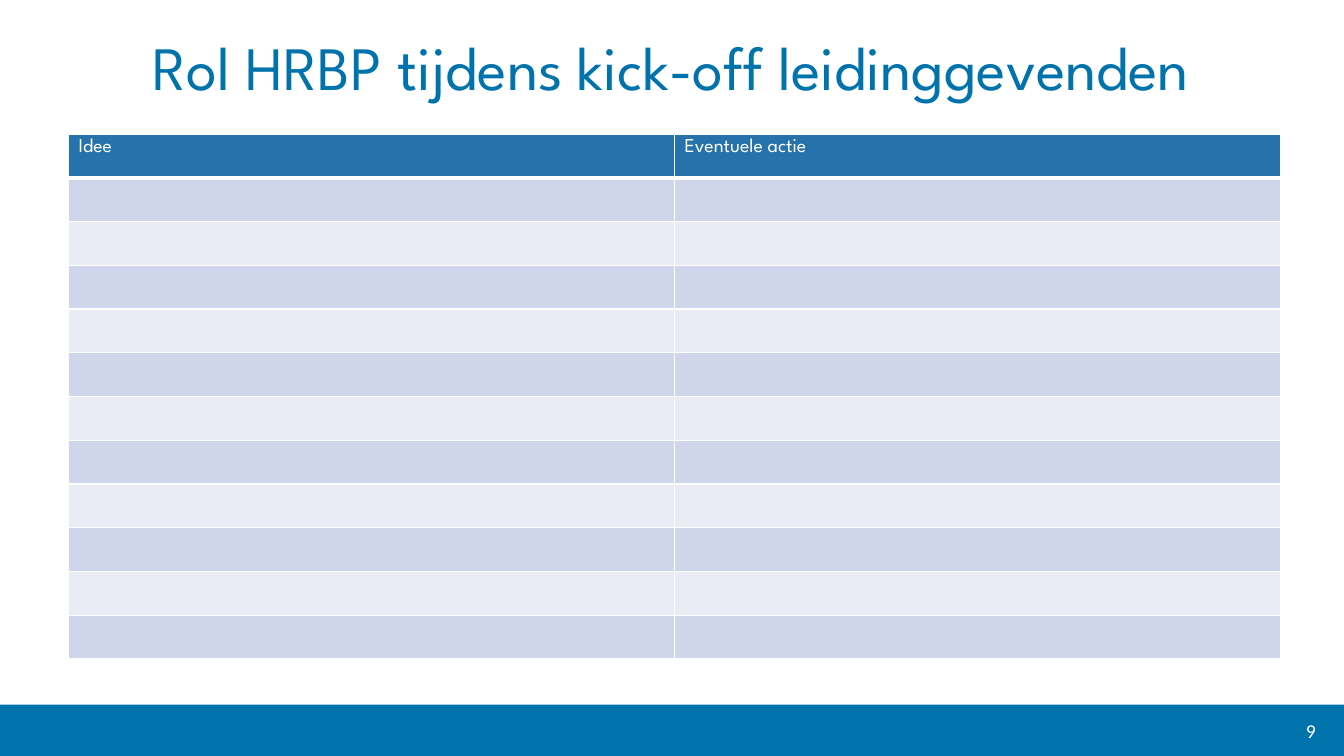
from lxml import etree
from pptx import Presentation
from pptx.dml.color import RGBColor
from pptx.enum.shapes import MSO_SHAPE
from pptx.enum.text import MSO_ANCHOR, MSO_AUTO_SIZE, PP_ALIGN
from pptx.oxml.ns import qn
from pptx.util import Inches, Pt

RECTANGLE = MSO_SHAPE.RECTANGLE
TOP, MIDDLE = MSO_ANCHOR.TOP, MSO_ANCHOR.MIDDLE
CENTER, RIGHT = PP_ALIGN.CENTER, PP_ALIGN.RIGHT
NO_FIT = MSO_AUTO_SIZE.NONE

# Content
TITLE = "Rol HRBP tijdens kick-off leidinggevenden"
HEADINGS = ["Idee", "Eventuele actie"]
EMPTY_ROWS = 11
PAGE_NUMBER = "9"

# Style
HEADING_FONT, NUMBER_FONT = "League Spartan", "Calibri"
BLUE, HEADER_BLUE, WHITE = "0073AC", "2673AC", "FFFFFF"
BANDS = ["CFD5EA", "E9EBF5"]


def color(value):
    return RGBColor.from_string(value)


def add_span(para, text, font, size, hue):
    span = para.add_run()
    span.text = text
    span.font.name = font
    span.font.size = Pt(size)
    span.font.color.rgb = color(hue)


def fill_cell(cell, hue, bottom_width):
    """Draw white borders around a cell, then fill it."""
    props = cell._tc.get_or_add_tcPr()
    for side, width in (("L", 1), ("R", 1), ("T", 1), ("B", bottom_width)):
        line = etree.SubElement(props, qn(f"a:ln{side}"), w=str(Pt(width)))
        solid = etree.SubElement(line, qn("a:solidFill"))
        etree.SubElement(solid, qn("a:srgbClr"), val=WHITE)
    cell.fill.solid()
    cell.fill.fore_color.rgb = color(hue)


deck = Presentation()
deck.slide_width, deck.slide_height = Inches(13.33), Inches(7.5)
page = deck.slides.add_slide(deck.slide_layouts[5])

# Footer bar
bar = page.shapes.add_shape(RECTANGLE, 0, Inches(6.99), deck.slide_width, Inches(0.51))
bar.shadow.inherit = False
bar.fill.solid()
bar.fill.fore_color.rgb = color(BLUE)
bar.line.fill.background()

# Page number
box = page.shapes.add_textbox(Inches(10.82), Inches(7.1), Inches(2.33), Inches(0.3))
box.text_frame.word_wrap = True
box.text_frame.vertical_anchor = MIDDLE
para = box.text_frame.paragraphs[0]
para.alignment = RIGHT
add_span(para, PAGE_NUMBER, NUMBER_FONT, 14, WHITE)

# Title
title = page.shapes.title
title.left, title.top = Inches(0.26), Inches(0.3)
title.width, title.height = Inches(12.81), Inches(0.78)
frame = title.text_frame
frame.word_wrap = True
frame.auto_size = NO_FIT
frame.vertical_anchor = TOP
frame.margin_left = frame.margin_right = Inches(0.13)
frame.margin_top = frame.margin_bottom = Inches(0.07)
para = frame.paragraphs[0]
para.alignment = CENTER
para.line_spacing = 0.9
add_span(para, TITLE, HEADING_FONT, 44, BLUE)

# Idea and action table
table = page.shapes.add_table(
    EMPTY_ROWS + 1, len(HEADINGS), Inches(0.68), Inches(1.33), Inches(12.02), Inches(5.21)
).table
for column, heading in enumerate(HEADINGS):
    header = table.cell(0, column)
    fill_cell(header, HEADER_BLUE, 3)
    add_span(header.text_frame.paragraphs[0], heading, HEADING_FONT, 14, WHITE)
    header.text_frame.paragraphs[0].runs[0].font.bold = False
    for row in range(EMPTY_ROWS):
        fill_cell(table.cell(row + 1, column), BANDS[row % 2], 1)

deck.save("out.pptx")
